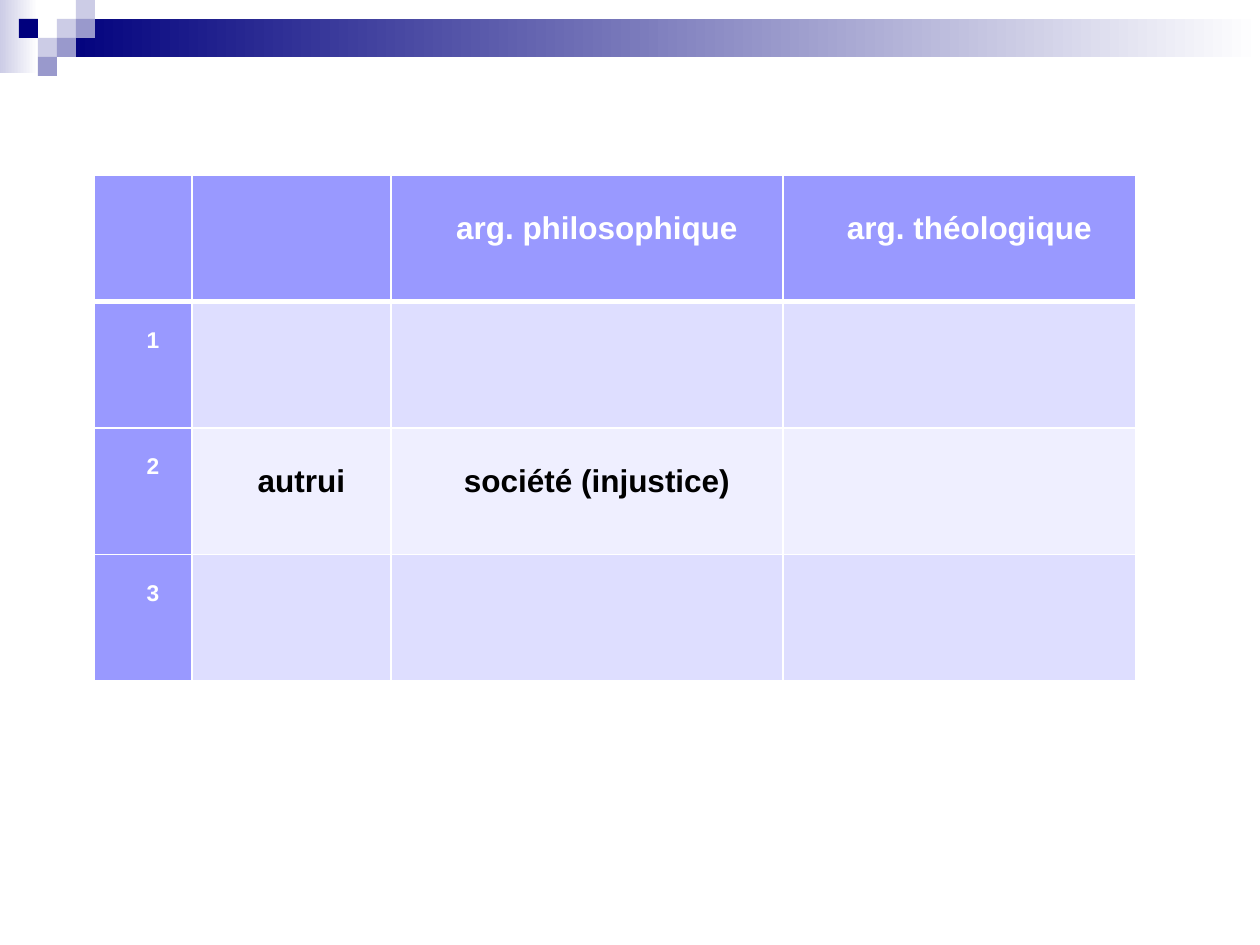
from dataclasses import dataclass

from lxml.etree import SubElement
from pptx import Presentation
from pptx.dml.color import RGBColor as Rgb
from pptx.enum.shapes import MSO_SHAPE as Shape
from pptx.enum.text import PP_ALIGN as Align
from pptx.oxml.ns import qn
from pptx.util import Emu, Pt

EMU_PER_PX = 914400 / 126


@dataclass(frozen=True)
class Theme:
    font: str = "Arial"
    text_size: int = 18
    number_size: int = 13
    white: str = "FFFFFF"
    black: str = "000000"
    navy: str = "00007D"
    pale: str = "CCCCE6"
    medium: str = "9999CC"
    header: str = "9999FF"
    odd_row: str = "DEDEFF"
    even_row: str = "EFEFFF"
    thin_line: int = 1
    thick_line: int = 3


THEME = Theme()

COLUMN_WIDTHS = (98, 199, 392, 353)
ROWS = (
    ("", "", "arg. philosophique", "arg. théologique"),
    ("1", "", "", ""),
    ("2", "autrui", "société (injustice)", ""),
    ("3", "", "", ""),
)
# Column and row of each square on the corner grid, with its colour
SQUARES = (
    (3, 1, THEME.pale),
    (4, 0, THEME.pale),
    (4, 1, THEME.medium),
    (2, 2, THEME.pale),
    (1, 1, THEME.navy),
    (3, 2, THEME.medium),
    (2, 3, THEME.medium),
)


def px(length):
    return Emu(round(length * EMU_PER_PX))


def add_rectangle(slide, left, top, width, height, color, fades=False):
    """Add a borderless rectangle, solid or fading to white on the right."""
    shape = slide.shapes.add_shape(
        Shape.RECTANGLE, px(left), px(top), px(width), px(height))
    shape.shadow.inherit = False
    shape.line.fill.background()
    if fades:
        shape.fill.gradient()
        shape.fill.gradient_angle = 0
        for position, (stop, stop_color) in enumerate(
                zip(shape.fill.gradient_stops, (color, THEME.white))):
            stop.position = position
            stop.color.rgb = Rgb.from_string(stop_color)
    else:
        shape.fill.solid()
        shape.fill.fore_color.rgb = Rgb.from_string(color)


def add_banner(slide, left, top, width, unit):
    """Add the fading bands and the corner squares on a grid of unit px."""
    add_rectangle(slide, left, top, 2 * unit, 73, THEME.pale, fades=True)
    add_rectangle(slide, left + 3 * unit, top + unit, width - 3 * unit,
                  2 * unit, THEME.navy, fades=True)
    for column, row, color in SQUARES:
        add_rectangle(slide, left + column * unit, top + row * unit,
                      unit, unit, color)


def set_borders(cell, row):
    """Draw white borders, thick between the header and the first row."""
    widths = {
        "a:lnL": THEME.thin_line,
        "a:lnR": THEME.thin_line,
        "a:lnT": THEME.thick_line if row == 1 else THEME.thin_line,
        "a:lnB": THEME.thick_line if row == 0 else THEME.thin_line,
    }
    properties = cell._tc.get_or_add_tcPr()
    for tag, width in widths.items():
        line = SubElement(properties, qn(tag), w=str(Pt(width)))
        fill = SubElement(line, qn("a:solidFill"))
        SubElement(fill, qn("a:srgbClr"), val=THEME.white)


def write_cell(cell, text, size, color):
    """Write centred bold text one line below the top of the cell."""
    margins = {"margin_left": px(9), "margin_right": px(9),
               "margin_top": px(2 * size), "margin_bottom": 0}
    for name, value in margins.items():
        setattr(cell, name, value)
    paragraph = cell.text_frame.paragraphs[0]
    paragraph.alignment = Align.CENTER
    paragraph._p.get_or_add_pPr().set("indent", str(px(20)))
    run = paragraph.add_run()
    run.text = text
    font_format = {"name": THEME.font, "size": Pt(size), "bold": True}
    for name, value in font_format.items():
        setattr(run.font, name, value)
    run.font.color.rgb = Rgb.from_string(color)


def add_argument_table(slide, left, top, height):
    table = slide.shapes.add_table(
        len(ROWS), len(COLUMN_WIDTHS), px(left), px(top),
        px(sum(COLUMN_WIDTHS)), px(height)).table
    table.first_col = True
    for column, width in zip(table.columns, COLUMN_WIDTHS):
        column.width = px(width)
    for row, texts in enumerate(ROWS):
        table.rows[row].height = px(height / len(ROWS))
        for column, text in enumerate(texts):
            cell = table.cell(row, column)
            is_heading = row == 0 or column == 0
            band = THEME.odd_row if row % 2 else THEME.even_row
            set_borders(cell, row)
            cell.fill.solid()
            cell.fill.fore_color.rgb = Rgb.from_string(
                THEME.header if is_heading else band)
            if text:
                write_cell(cell, text,
                           THEME.text_size if column else THEME.number_size,
                           THEME.white if is_heading else THEME.black)


def main():
    presentation = Presentation()
    presentation.slide_width = px(1260)
    presentation.slide_height = px(945)
    slide = presentation.slides.add_slide(presentation.slide_layouts[6])
    add_banner(slide, left=0, top=0, width=1260, unit=19)
    add_argument_table(slide, left=94, top=175, height=506)
    presentation.save("out.pptx")


if __name__ == "__main__":
    main()
